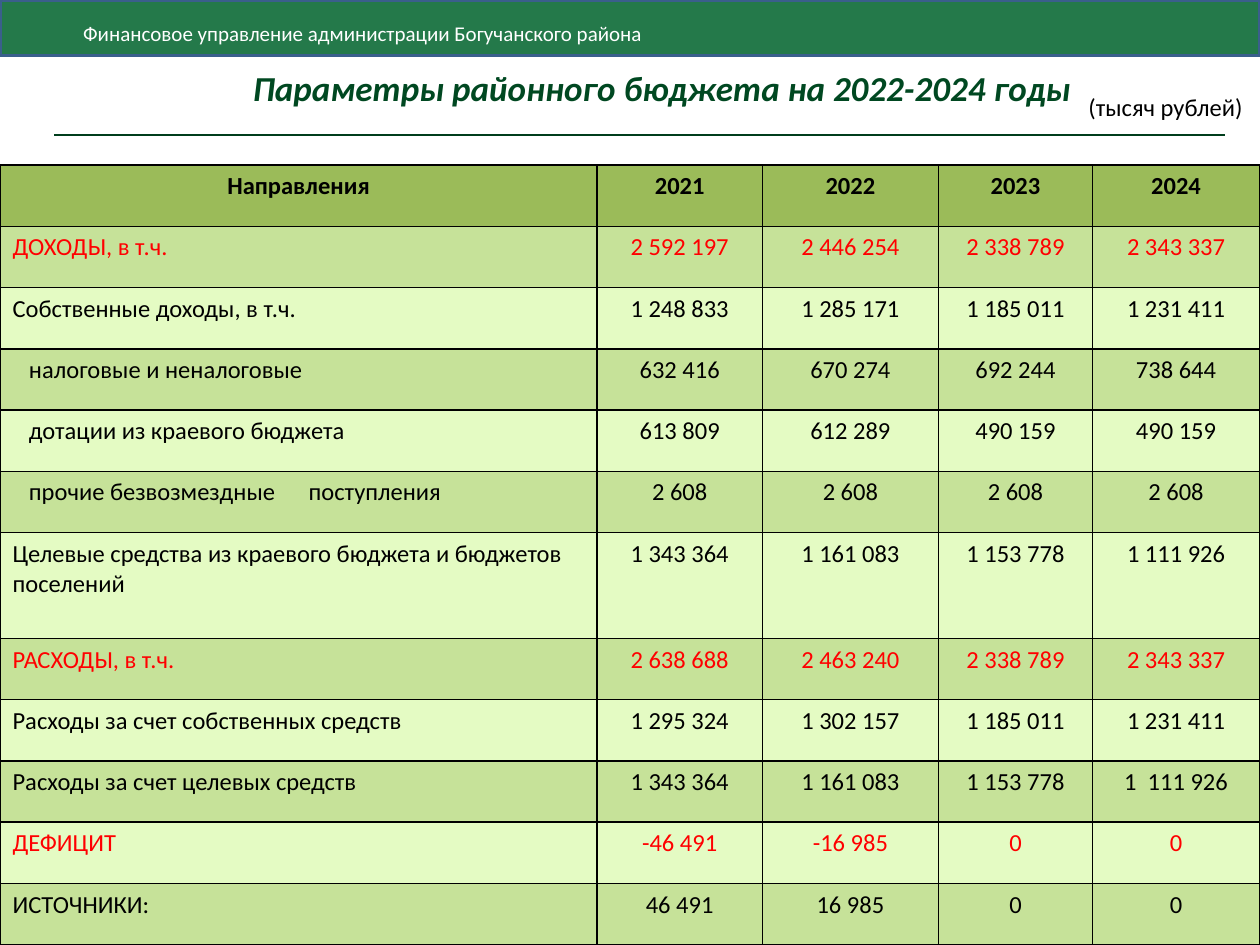
"""Build the district budget parameters slide."""
from lxml.etree import SubElement
from pptx import Presentation
from pptx.dml.color import RGBColor
from pptx.enum.shapes import MSO_CONNECTOR, MSO_SHAPE
from pptx.enum.text import MSO_ANCHOR, PP_ALIGN
from pptx.oxml.ns import qn
from pptx.util import Inches, Pt

COLORS = {
    "band": "00642D", "band_edge": "3A5F8C", "rule": "003E1C", "title": "004821",
    "white": "FFFFFF", "black": "000000", "total": "FF0000",
    "header": "9BBB59", "dark_row": "C6E299", "light_row": "E4FBC3",
}
WIDTH, HEIGHT = 10, 7.5
TABLE_TOP, TALL_ROW, TALL_HEIGHT = 1.31, 6, 0.84
INDENT, TAB_STOP = 0.23, 2.22
COLUMNS = [4.74, 1.31, 1.4, 1.22, 1.33]
DEPARTMENT = "Финансовое управление администрации Богучанского района"
TITLE = "Параметры районного бюджета на 2022-2024 годы"
UNITS = "(тысяч рублей)"
BUDGET = [
    ("Направления", "2021", "2022", "2023", "2024"),
    ("ДОХОДЫ, в т.ч.", "2 592 197", "2 446 254", "2 338 789", "2 343 337"),
    ("Собственные доходы, в т.ч.", "1 248 833", "1 285 171", "1 185 011", "1 231 411"),
    ("налоговые и неналоговые", "632 416", "670 274", "692 244", "738 644"),
    ("дотации из краевого бюджета", "613 809", "612 289", "490 159", "490 159"),
    ("прочие безвозмездные\tпоступления", "2 608", "2 608", "2 608", "2 608"),
    ("Целевые средства из краевого бюджета и бюджетов поселений",
     "1 343 364", "1 161 083", "1 153 778", "1 111 926"),
    ("РАСХОДЫ, в т.ч.", "2 638 688", "2 463 240", "2 338 789", "2 343 337"),
    ("Расходы за счет собственных средств", "1 295 324", "1 302 157", "1 185 011", "1 231 411"),
    ("Расходы за счет целевых средств", "1 343 364", "1 161 083", "1 153 778", "1  111 926"),
    ("ДЕФИЦИТ", "-46 491", "-16 985", "0", "0"),
    ("ИСТОЧНИКИ:", "46 491", "16 985", "0", "0"),
]
TOTAL_ROWS = {1, 7, 10}
INDENTED_ROWS = {3, 4, 5}


def rgb(name):
    return RGBColor.from_string(COLORS[name])


def write(frame, text, color, align=PP_ALIGN.LEFT, **formats):
    frame.text = text
    paragraph = frame.paragraphs[0]
    paragraph.alignment = align
    if "\t" in text:
        tabs = SubElement(paragraph._p.get_or_add_pPr(), qn("a:tabLst"))
        SubElement(tabs, qn("a:tab"), pos=str(Inches(TAB_STOP)), algn="l")
    font = paragraph.runs[0].font
    font.color.rgb = rgb(color)
    for key, value in {"name": "Calibri", "size": Pt(14), **formats}.items():
        setattr(font, key, value)


def add_label(slide, box, anchor, *content, **formats):
    frame = slide.shapes.add_textbox(*map(Inches, box)).text_frame
    frame.word_wrap = True
    frame.vertical_anchor = anchor
    write(frame, *content, **formats)


def add_borders(cell):
    properties = cell._tc.get_or_add_tcPr()
    for side in ("lnL", "lnR", "lnT", "lnB"):
        border = SubElement(properties, qn(f"a:{side}"), w=str(Pt(1)))
        fill = SubElement(border, qn("a:solidFill"))
        SubElement(fill, qn("a:srgbClr"), val=COLORS["black"])


def add_header(slide):
    band = slide.shapes.add_shape(MSO_SHAPE.RECTANGLE, 0, 0, Inches(WIDTH), Inches(0.44))
    band.shadow.inherit = False
    band.fill.solid()
    band.fill.fore_color.rgb = rgb("band")
    tint = band._element.spPr.find(qn("a:solidFill")).find(qn("a:srgbClr"))
    SubElement(tint, qn("a:alpha"), val="86000")
    band.line.color.rgb = rgb("band_edge")
    band.line.width = Pt(2)
    frame = band.text_frame
    frame.vertical_anchor = MSO_ANCHOR.MIDDLE
    frame.margin_left, frame.margin_top = Inches(0.66), Inches(0.13)
    write(frame, DEPARTMENT, "white", size=Pt(12))

    rule = slide.shapes.add_connector(
        MSO_CONNECTOR.STRAIGHT, *map(Inches, (0.43, 1.07, 9.72, 1.07)))
    rule.line.color.rgb = rgb("rule")
    rule.line.width = Pt(1.25)
    SubElement(rule._element.spPr, qn("a:effectLst"))


def add_budget(slide):
    table_height = HEIGHT - TABLE_TOP
    table = slide.shapes.add_table(
        len(BUDGET), len(COLUMNS),
        *map(Inches, (0, TABLE_TOP, WIDTH, table_height))).table
    table.first_row = table.horz_banding = False
    row_height = (table_height - TALL_HEIGHT) / (len(BUDGET) - 1)
    for column, width in zip(table.columns, COLUMNS):
        column.width = Inches(width)
    for r, entries in enumerate(BUDGET):
        table.rows[r].height = Inches(TALL_HEIGHT if r == TALL_ROW else row_height)
        shade = "header" if r == 0 else "dark_row" if r % 2 else "light_row"
        for c, entry in enumerate(entries):
            cell = table.cell(r, c)
            add_borders(cell)
            cell.fill.solid()
            cell.fill.fore_color.rgb = rgb(shade)
            if c == 0 and r in INDENTED_ROWS:
                cell.margin_left = Inches(INDENT)
            write(cell.text_frame, entry, "total" if r in TOTAL_ROWS else "black",
                  PP_ALIGN.CENTER if r == 0 or c else PP_ALIGN.LEFT, bold=r == 0)


def main():
    deck = Presentation()
    deck.slide_width, deck.slide_height = Inches(WIDTH), Inches(HEIGHT)
    slide = deck.slides.add_slide(deck.slide_layouts[6])
    add_header(slide)
    add_label(slide, (0.51, 0.46, 9.49, 0.47), MSO_ANCHOR.MIDDLE, TITLE, "title",
              PP_ALIGN.CENTER, size=Pt(20), bold=True, italic=True)
    add_budget(slide)
    add_label(slide, (8.54, 0.68, 1.46, 0.34), MSO_ANCHOR.TOP, UNITS, "black")
    deck.save("out.pptx")


if __name__ == "__main__":
    main()
